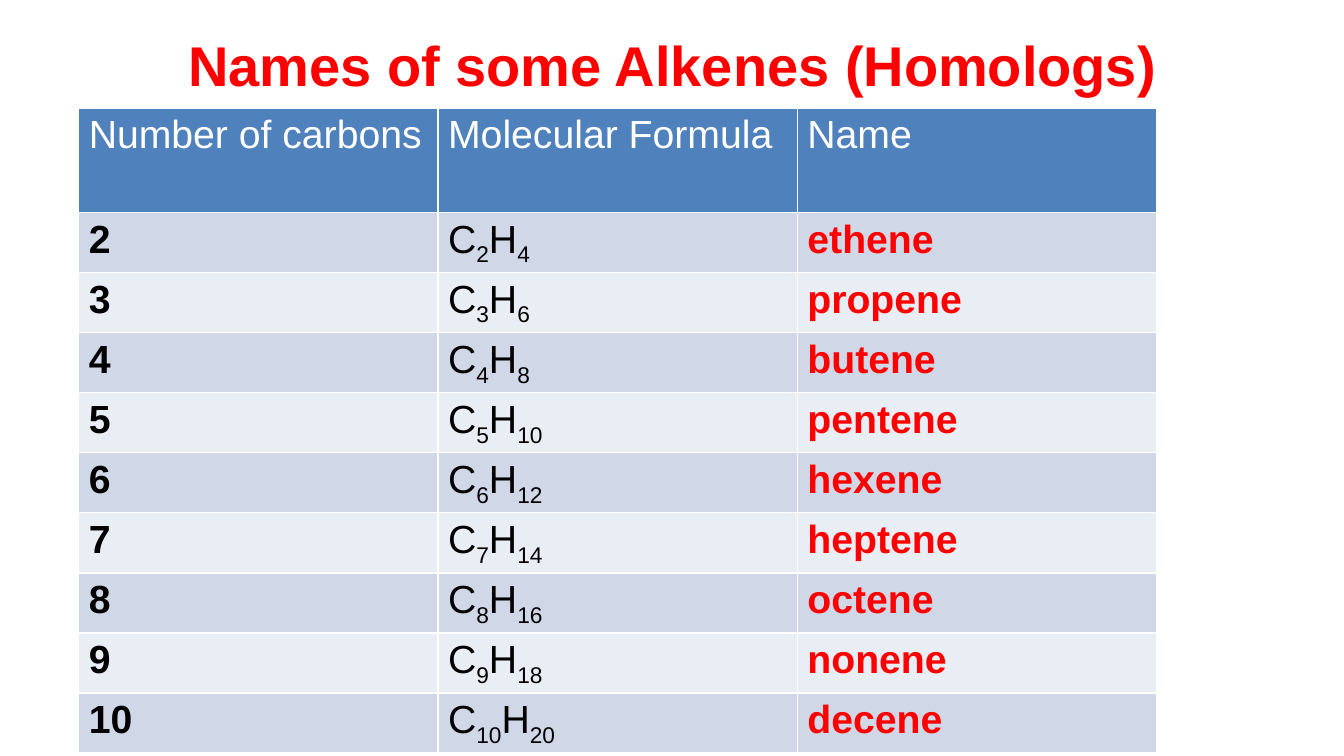
"""Build a slide with a table of the first alkenes and their formulas."""
import pptx
import pptx.dml.color
import pptx.enum.text
import pptx.oxml
import pptx.oxml.ns
import pptx.util

Pt = pptx.util.Pt
HEADERS = ["Number of carbons", "Molecular Formula", "Name"]
NAMES = ["ethene", "propene", "butene", "pentene", "hexene", "heptene", "octene", "nonene", "decene"]
BORDER = '<a:{} {} w="{}"><a:solidFill><a:srgbClr val="FFFFFF"/></a:solidFill></a:{}>'


def rgb(color):
    return pptx.dml.color.RGBColor.from_string(color)


def add_run(p, text, size, color, bold):
    r = p.add_run()
    r.text = text
    r.font.name = "Arial"
    r.font.size = Pt(size)
    r.font.bold = bold
    r.font.color.rgb = rgb(color)
    return r


prs = pptx.Presentation()
prs.slide_width, prs.slide_height = Pt(960), Pt(540)
s = prs.slides.add_slide(prs.slide_layouts[6])

tf = s.shapes.add_textbox(Pt(120), Pt(9), Pt(720), Pt(74)).text_frame
tf.word_wrap = True
tf.vertical_anchor = pptx.enum.text.MSO_ANCHOR.MIDDLE
p = tf.paragraphs[0]
p.alignment = pptx.enum.text.PP_ALIGN.CENTER
add_run(p, "Names of some Alkenes (Homologs)", 40, "FF0000", True)

rows = len(NAMES) + 1
table = s.shapes.add_table(rows, 3, Pt(56.2), Pt(77.4), Pt(770.1), Pt(460.6)).table
for column in table.columns:
    column.width = Pt(256.7)
for i, row in enumerate(table.rows):
    row.height = Pt(42.9 if i else 74.5)

for col, header in enumerate(HEADERS):
    add_run(table.cell(0, col).text_frame.paragraphs[0], header, 28, "FFFFFF", False)

for carbons, name in enumerate(NAMES, start=2):
    count, formula, label = [table.cell(carbons - 1, col).text_frame.paragraphs[0] for col in range(3)]
    add_run(count, str(carbons), 28, "000000", True)
    for symbol, number in (("C", carbons), ("H", 2 * carbons)):
        add_run(formula, symbol, 28, "000000", False)
        r = add_run(formula, str(number), 28, "000000", False)
        r.font._element.set("baseline", "-25000")
    add_run(label, name, 28, "FF0000", True)

for i in range(rows):
    fill = "4F81BD" if i == 0 else "D0D8E8" if i % 2 else "E9EDF4"
    for col in range(3):
        cell = table.cell(i, col)
        cell.margin_bottom = Pt(1)
        cell.fill.solid()
        cell.fill.fore_color.rgb = rgb(fill)
        tcPr = cell._tc.get_or_add_tcPr()
        for k, side in enumerate(("lnL", "lnR", "lnT", "lnB")):
            xml = BORDER.format(side, pptx.oxml.ns.nsdecls("a"), Pt(1), side)
            tcPr.insert(k, pptx.oxml.parse_xml(xml))

prs.save("out.pptx")
